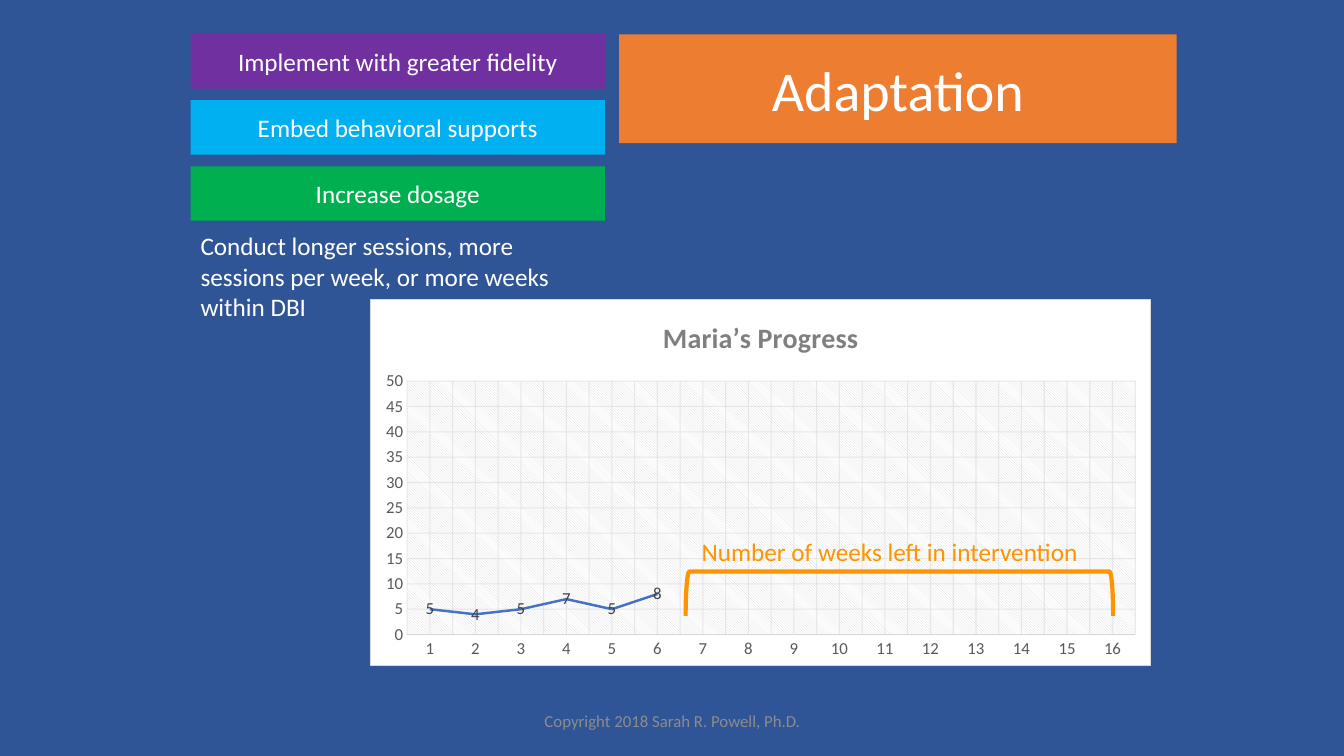
from copy import deepcopy

from lxml import etree
from pptx import Presentation
from pptx.chart.data import CategoryChartData
from pptx.dml.color import RGBColor
from pptx.enum.chart import XL_CHART_TYPE, XL_LABEL_POSITION, XL_TICK_MARK
from pptx.enum.shapes import MSO_SHAPE
from pptx.enum.text import MSO_ANCHOR, PP_ALIGN
from pptx.oxml import parse_xml
from pptx.oxml.ns import nsdecls, qn
from pptx.util import Inches, Pt

FONT = "Calibri"
WHITE, GREY, ORANGE = "FFFFFF", "D9D9D9", "FF9300"
STRATEGIES = [
    ("Implement with greater fidelity", "7030A0"),
    ("Embed behavioral supports", "00B0F0"),
    ("Increase dosage", "00B050"),
]
SCORES = [5, 4, 5, 7, 5, 8]
WEEKS = 16


def rgb(value):
    return RGBColor.from_string(value)


def set_font(font, size, color, bold=False):
    font.name, font.size, font.bold = FONT, Pt(size), bold
    font.color.rgb = rgb(color)


def set_line(line, color, width):
    line.color.rgb = rgb(color)
    line.width = Pt(width)


def write(sp, text, size, color=WHITE, align=PP_ALIGN.CENTER, anchor=MSO_ANCHOR.MIDDLE):
    tf = sp.text_frame
    tf.text = text
    tf.word_wrap = True
    tf.vertical_anchor = anchor
    p = tf.paragraphs[0]
    p.alignment = align
    set_font(p.runs[0].font, size, color)


def add_text(slide, box, text, size, color=WHITE, **layout):
    sp = slide.shapes.add_textbox(*map(Inches, box))
    write(sp, text, size, color, **layout)


def add_title(slide, box, text):
    sp = slide.shapes.title
    sp.left, sp.top, sp.width, sp.height = map(Inches, box)
    sp.fill.solid()
    sp.fill.fore_color.rgb = rgb("ED7D31")
    write(sp, text, 40)


def add_strategies(slide, box):
    """Stack the coloured bars in the box, with the explanation below them."""
    left, top, width, height = box
    bar_height, step = 0.54, 0.655
    for i, (text, color) in enumerate(STRATEGIES):
        sp = slide.shapes.add_shape(
            MSO_SHAPE.RECTANGLE, *map(Inches, (left, top + i * step, width, bar_height)))
        sp.shadow.inherit = False
        sp.fill.solid()
        sp.fill.fore_color.rgb = rgb(color)
        sp.line.fill.background()
        write(sp, text, 18)
    note_top = top + 1.9
    add_text(slide, (left, note_top, width, top + height - note_top),
             "Conduct longer sessions, more sessions per week, or more weeks within DBI",
             18, align=PP_ALIGN.LEFT, anchor=MSO_ANCHOR.TOP)


def format_axis(axis):
    axis.major_tick_mark = axis.minor_tick_mark = XL_TICK_MARK.NONE
    set_font(axis.tick_labels.font, 12, "595959")
    axis.has_major_gridlines = True
    set_line(axis.major_gridlines.format.line, GREY, 0.75)


def soften_gridlines(chart):
    """Make the gridlines translucent and repeat the weekly ones as minor lines."""
    space = chart._chartSpace
    for color in space.xpath(".//c:majorGridlines//a:srgbClr"):
        etree.SubElement(color, qn("a:alpha")).set("val", "54000")
    chart.category_axis.has_minor_gridlines = True
    major, minor = (space.xpath(f".//c:catAx/c:{grid}")[0]
                    for grid in ("majorGridlines", "minorGridlines"))
    minor.append(deepcopy(major[0]))


def fill_backgrounds(chart):
    """Give the chart a bordered white ground and the plot a hatched one."""
    space = chart._chartSpace
    space.find(qn("c:chart")).addnext(parse_xml(
        f'<c:spPr {nsdecls("c", "a")}>'
        f'<a:solidFill><a:srgbClr val="{WHITE}"/></a:solidFill>'
        f'<a:ln w="9525"><a:solidFill><a:srgbClr val="{GREY}"/></a:solidFill></a:ln>'
        '</c:spPr>'))
    space.find(".//" + qn("c:plotArea")).append(parse_xml(
        f'<c:spPr {nsdecls("c", "a")}><a:pattFill prst="ltDnDiag">'
        f'<a:fgClr><a:srgbClr val="{GREY}"/></a:fgClr>'
        f'<a:bgClr><a:srgbClr val="{WHITE}"/></a:bgClr>'
        '</a:pattFill><a:ln><a:noFill/></a:ln></c:spPr>'))


def add_progress_chart(slide, box):
    data = CategoryChartData()
    data.categories = [str(week) for week in range(1, WEEKS + 1)]
    data.add_series("Series 1", SCORES + [None] * (WEEKS - len(SCORES)))
    chart = slide.shapes.add_chart(
        XL_CHART_TYPE.LINE, *map(Inches, box), data).chart
    set_font(chart.font, 10, "000000")
    chart.has_legend = False
    chart.has_title = True
    tf = chart.chart_title.text_frame
    tf.text = "Maria’s Progress"
    set_font(tf.paragraphs[0].runs[0].font, 20, "7F7F7F", bold=True)

    weeks, scores = chart.category_axis, chart.value_axis
    for axis in (weeks, scores):
        format_axis(axis)
    set_line(weeks.format.line, GREY, 0.75)
    scores.format.line.fill.background()
    scores.minimum_scale, scores.maximum_scale, scores.major_unit = 0, 50, 5

    plot = chart.plots[0]
    plot.vary_by_categories = False
    series = plot.series[0]
    series.smooth = False
    set_line(series.format.line, "4472C4", 1.75)
    labels = series.data_labels
    labels.show_value = True
    labels.position = XL_LABEL_POSITION.CENTER
    set_font(labels.font, 12, "404040")
    soften_gridlines(chart)
    fill_backgrounds(chart)


def add_weeks_left(slide, box):
    """Label the box and close it with a bracket that opens downwards."""
    left, top, width, height = box
    add_text(slide, (left, top, width, 0.4), "Number of weeks left in intervention",
             18, ORANGE, align=PP_ALIGN.LEFT, anchor=MSO_ANCHOR.TOP)
    depth, span = 0.44, 4.24
    center_x, center_y = left + width / 2 - 0.03, top + height - depth / 2
    sp = slide.shapes.add_shape(
        MSO_SHAPE.LEFT_BRACKET,
        *map(Inches, (center_x - depth / 2, center_y - span / 2, depth, span)))
    sp.rotation = 90
    sp.shadow.inherit = False
    sp.fill.background()
    set_line(sp.line, ORANGE, 3)


def main():
    prs = Presentation()
    prs.slide_width, prs.slide_height = Inches(13.33), Inches(7.5)
    slide = prs.slides.add_slide(prs.slide_layouts[5])
    slide.background.fill.solid()
    slide.background.fill.fore_color.rgb = rgb("2F5597")
    add_title(slide, (6.14, 0.34, 5.53, 1.08), "Adaptation")
    add_strategies(slide, (1.89, 0.34, 4.11, 2.91))
    add_progress_chart(slide, (3.67, 2.97, 7.75, 3.64))
    add_weeks_left(slide, (6.86, 5.27, 4.18, 0.84))
    add_text(slide, (4.42, 6.95, 4.5, 0.4),
             "Copyright 2018 Sarah R. Powell, Ph.D.", 12, "8C8C8C")
    prs.save("out.pptx")


if __name__ == "__main__":
    main()
